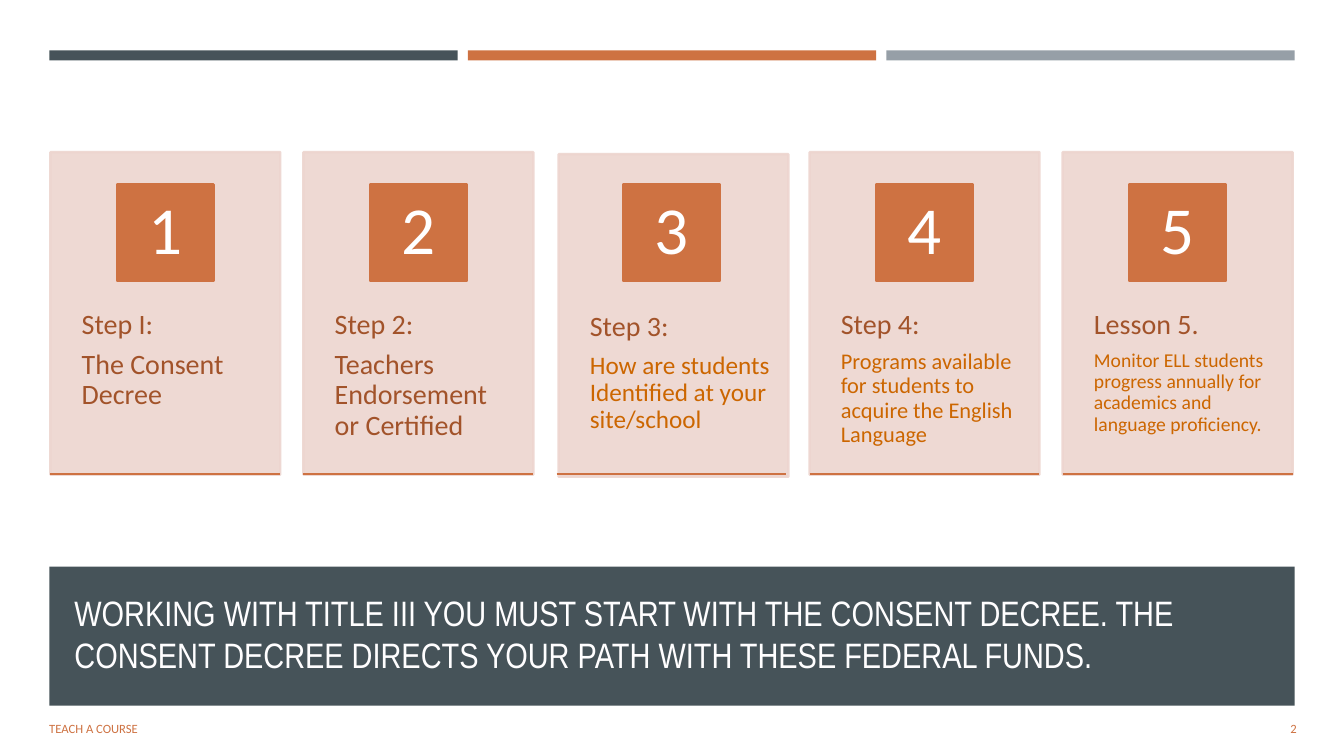
from lxml.etree import SubElement
from pptx import Presentation
from pptx.dml.color import RGBColor
from pptx.enum.shapes import MSO_SHAPE
from pptx.enum.text import MSO_ANCHOR, PP_ALIGN
from pptx.oxml.ns import qn
from pptx.util import Pt

PX = 9144  # 100 px to the inch
SLATE, ORANGE, GREY, PINK = "465359", "CE7242", "969FA7", "EDD5CF"
RUST, AMBER, WHITE = "A2532A", "CC6600", "FFFFFF"

prs = Presentation()
prs.slide_width, prs.slide_height = 1333 * PX, 750 * PX
s = prs.slides.add_slide(prs.slide_layouts[6])


def box(x, y, w, h, fill=None, line=None, opacity=100, margins=(10, 5, 10, 5),
        anchor=MSO_ANCHOR.MIDDLE):
    """Add a filled rectangle, or a text box when there is no fill."""
    area = [v * PX for v in (x, y, w, h)]
    if fill:
        sp = s.shapes.add_shape(MSO_SHAPE.RECTANGLE, *area)
        sp.shadow.inherit = False
        sp.fill.solid()
        sp.fill.fore_color.rgb = RGBColor.from_string(fill)
        if line:
            sp.line.color.rgb = RGBColor.from_string(line)
            sp.line.width = Pt(1.75)
        else:
            sp.line.fill.background()
        if opacity < 100:
            for color in sp._element.spPr.iter(qn("a:srgbClr")):
                SubElement(color, qn("a:alpha"), val=str(opacity * 1000))
    else:
        sp = s.shapes.add_textbox(*area)
    tf = sp.text_frame
    tf.word_wrap = True
    tf.vertical_anchor = anchor
    tf.margin_left, tf.margin_top, tf.margin_right, tf.margin_bottom = (
        v * PX for v in margins)
    return tf


def write(p, text, size, color, font="Calibri", align=PP_ALIGN.LEFT,
          spacing=1.0, after=0):
    p.alignment, p.line_spacing, p.space_after = align, spacing, Pt(after)
    r = p.add_run()
    r.text = text
    r.font.size, r.font.name = Pt(size), font
    r.font.color.rgb = RGBColor.from_string(color)


# Title band
box(49, 562, 1235, 138, SLATE)
title = box(64, 576, 1206, 105)
write(title.paragraphs[0],
      "WORKING WITH TITLE III YOU MUST START WITH THE CONSENT DECREE. "
      "THE CONSENT DECREE DIRECTS YOUR PATH WITH THESE FEDERAL FUNDS.",
      25.2, "FFFEFF", font="Arial Narrow")

# Top bars
for i, color in enumerate((SLATE, ORANGE, GREY)):
    box(49 + 415 * i, 50, 405, 10, color)

# Footer
footer = box(39, 703, 756, 40)
write(footer.paragraphs[0], "TEACH A COURSE", 9, ORANGE, after=6)
page = box(1181, 703, 115, 40)
write(page.paragraphs[0], "2", 9, ORANGE, align=PP_ALIGN.RIGHT, after=6)

# Step cards: heading, body, body size, body colour, nudge
steps = [
    ("Step I:", "The Consent Decree", 20, RUST, 0),
    ("Step 2:", "Teachers Endorsement or Certified", 20, RUST, 0),
    ("Step 3:", "How are students Identified at your site/school", 18, AMBER, 2),
    ("Step 4:", "Programs available for students to acquire the English Language",
     16, AMBER, 0),
    ("Lesson 5.", "Monitor ELL students progress annually for academics and "
     "language proficiency.", 14, AMBER, 0),
]
for i, (heading, body, size, color, nudge) in enumerate(steps):
    x = 50 + 251 * i
    box(x + nudge, 151 + nudge, 228, 320, PINK, line=PINK, opacity=90)
    card = box(x + nudge, 272 + nudge, 228, 192, margins=(31, 36, 18, 36),
               anchor=MSO_ANCHOR.TOP)
    write(card.paragraphs[0], heading, 20, RUST, spacing=0.9, after=7)
    write(card.add_paragraph(), body, size, color, spacing=0.9, after=7)
    number = box(x + 66, 183, 96, 96, ORANGE, line=ORANGE, margins=(7, 1, 7, 1))
    write(number.paragraphs[0], str(i + 1), 48, WHITE, align=PP_ALIGN.CENTER,
          spacing=0.9)
    rule = s.shapes.add_connector(1, x * PX, 470 * PX, (x + 228) * PX, 470 * PX)
    rule.line.color.rgb = RGBColor.from_string(ORANGE)
    rule.line.width = Pt(1.75)
    SubElement(rule._element.spPr, qn("a:effectLst"))

prs.save("out.pptx")
